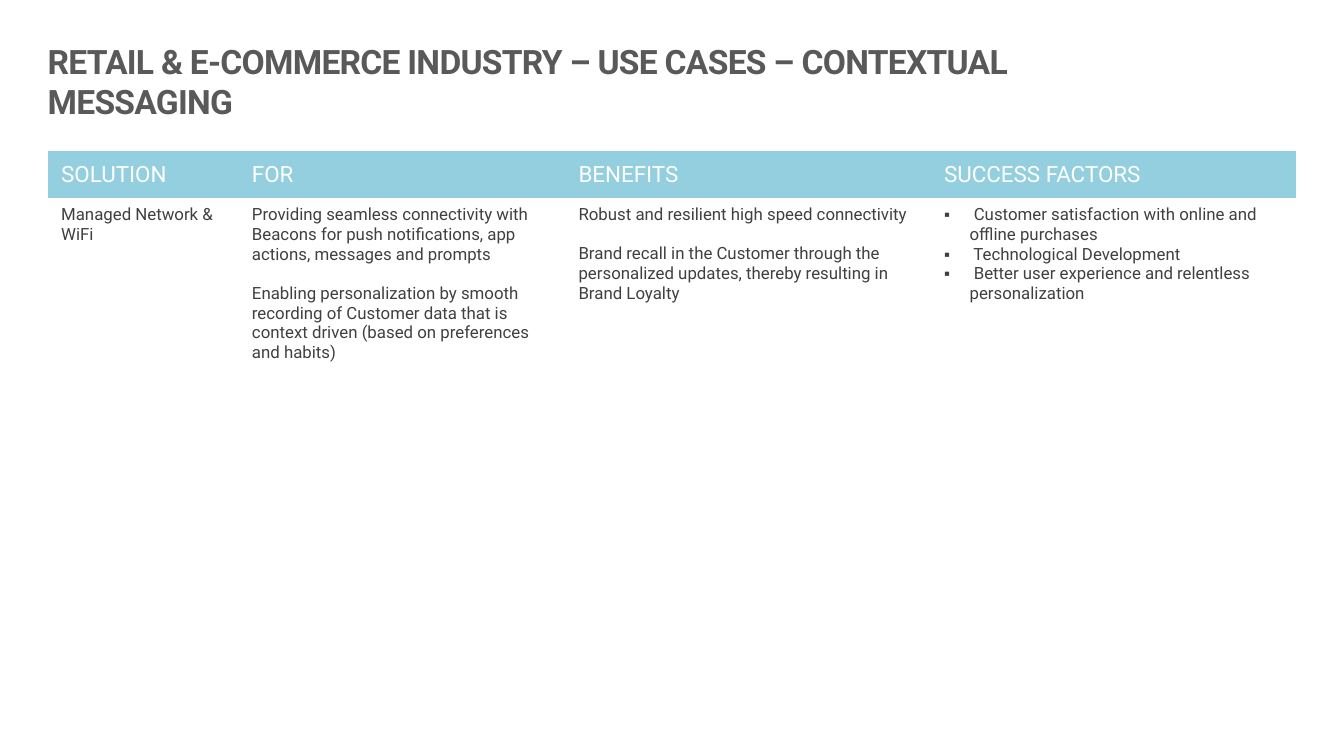
from dataclasses import dataclass

import pptx
import pptx.dml.color
import pptx.enum.text
import pptx.oxml
import pptx.oxml.ns
import pptx.util

PX = 4572  # EMU per px, 200 px to the inch
FONT = "Roboto"
COLORS = {"title": "595959", "header": "93CFDE", "header_text": "FFFFFF",
          "body": "FFFFFF", "body_text": "404040"}
PLAIN_STYLE = "{2D5ABB26-0587-4C30-8999-92F81FD0307C}"  # no style, no grid
LEFT = 71
ROW_HEIGHTS = [71, 384]
MIDDLE = pptx.enum.text.MSO_ANCHOR.MIDDLE
TOP = pptx.enum.text.MSO_ANCHOR.TOP


@dataclass
class Column:
    heading: str
    width: int
    texts: list[str]
    bulleted: bool = False


COLUMNS = [
    Column("SOLUTION", 284, ["Managed Network & WiFi"]),
    Column("FOR", 486, [
        "Providing seamless connectivity with Beacons for push notifications, "
        "app actions, messages and prompts",
        "Enabling personalization by smooth recording of Customer data that is "
        "context driven (based on preferences and habits)"]),
    Column("BENEFITS", 544, [
        "Robust and resilient high speed connectivity",
        "Brand recall in the Customer through the personalized updates, "
        "thereby resulting in Brand Loyalty"]),
    Column("SUCCESS FACTORS", 544, [
        " Customer satisfaction with online and offline purchases",
        " Technological Development",
        " Better user experience and relentless personalization"], True),
]


def px(n: int) -> pptx.util.Emu:
    return pptx.util.Emu(n * PX)


def rgb(name: str) -> pptx.dml.color.RGBColor:
    return pptx.dml.color.RGBColor.from_string(COLORS[name])


def set_attrs(obj, values: dict) -> None:
    for name, value in values.items():
        setattr(obj, name, value)


def add_run(p, text: str, size: int, color: str, bold: bool = False):
    r = p.add_run()
    r.text = text
    set_attrs(r.font, {"name": FONT, "size": pptx.util.Pt(size), "bold": bold})
    r.font.color.rgb = rgb(color)
    return r


def add_bullet(p) -> None:
    pPr = p._p.get_or_add_pPr()
    pPr.set("marL", str(px(38)))
    pPr.set("indent", str(-px(38)))
    ns = pptx.oxml.ns.nsdecls("a")
    for tag in ('buFont {} typeface="Arial"', 'buChar {} char="▪"'):
        pPr.append(pptx.oxml.parse_xml(f"<a:{tag.format(ns)}/>"))


def fill_cell(cell, texts: list[str], size: int, fill: str, anchor,
              bulleted: bool = False) -> None:
    cell.fill.solid()
    cell.fill.fore_color.rgb = rgb(fill)
    cell.vertical_anchor = anchor
    tf = cell.text_frame
    for i, text in enumerate(texts):
        p = tf.add_paragraph() if i else tf.paragraphs[0]
        if bulleted:
            add_bullet(p)
        elif i:
            p.space_before = pptx.util.Pt(10.5)
        add_run(p, text, size, f"{fill}_text")


def add_title(s, text: str) -> None:
    sp = s.shapes.title
    set_attrs(sp, {"left": px(LEFT), "top": px(81),
                   "width": px(1648), "height": px(80)})
    tf = sp.text_frame
    set_attrs(tf, {"margin_left": 0, "margin_right": px(20),
                   "margin_top": px(10), "margin_bottom": px(10),
                   "word_wrap": True, "vertical_anchor": MIDDLE,
                   "auto_size": pptx.enum.text.MSO_AUTO_SIZE.NONE})
    p = tf.paragraphs[0]
    p.alignment = pptx.enum.text.PP_ALIGN.LEFT
    r = add_run(p, text, 18, "title", bold=True)
    r.font._element.set("spc", "-40")


def add_use_case_table(s, columns: list[Column]) -> None:
    width = sum(c.width for c in columns)
    table = s.shapes.add_table(len(ROW_HEIGHTS), len(columns), px(LEFT), px(224),
                               px(width), px(sum(ROW_HEIGHTS))).table
    set_attrs(table, {"first_row": False, "horz_banding": False})
    table._tbl.tblPr.find(pptx.oxml.ns.qn("a:tableStyleId")).text = PLAIN_STYLE
    for row, height in zip(table.rows, ROW_HEIGHTS):
        row.height = px(height)
    for i, c in enumerate(columns):
        table.columns[i].width = px(c.width)
        fill_cell(table.cell(0, i), [c.heading], 12, "header", MIDDLE)
        fill_cell(table.cell(1, i), c.texts, 9, "body", TOP, c.bulleted)


def main() -> None:
    prs = pptx.Presentation()
    set_attrs(prs, {"slide_width": px(2000), "slide_height": px(1125)})
    s = prs.slides.add_slide(prs.slide_layouts[5])  # title only
    add_title(s, "RETAIL & E-COMMERCE INDUSTRY – USE CASES – CONTEXTUAL MESSAGING")
    add_use_case_table(s, COLUMNS)
    prs.save("out.pptx")


if __name__ == "__main__":
    main()
